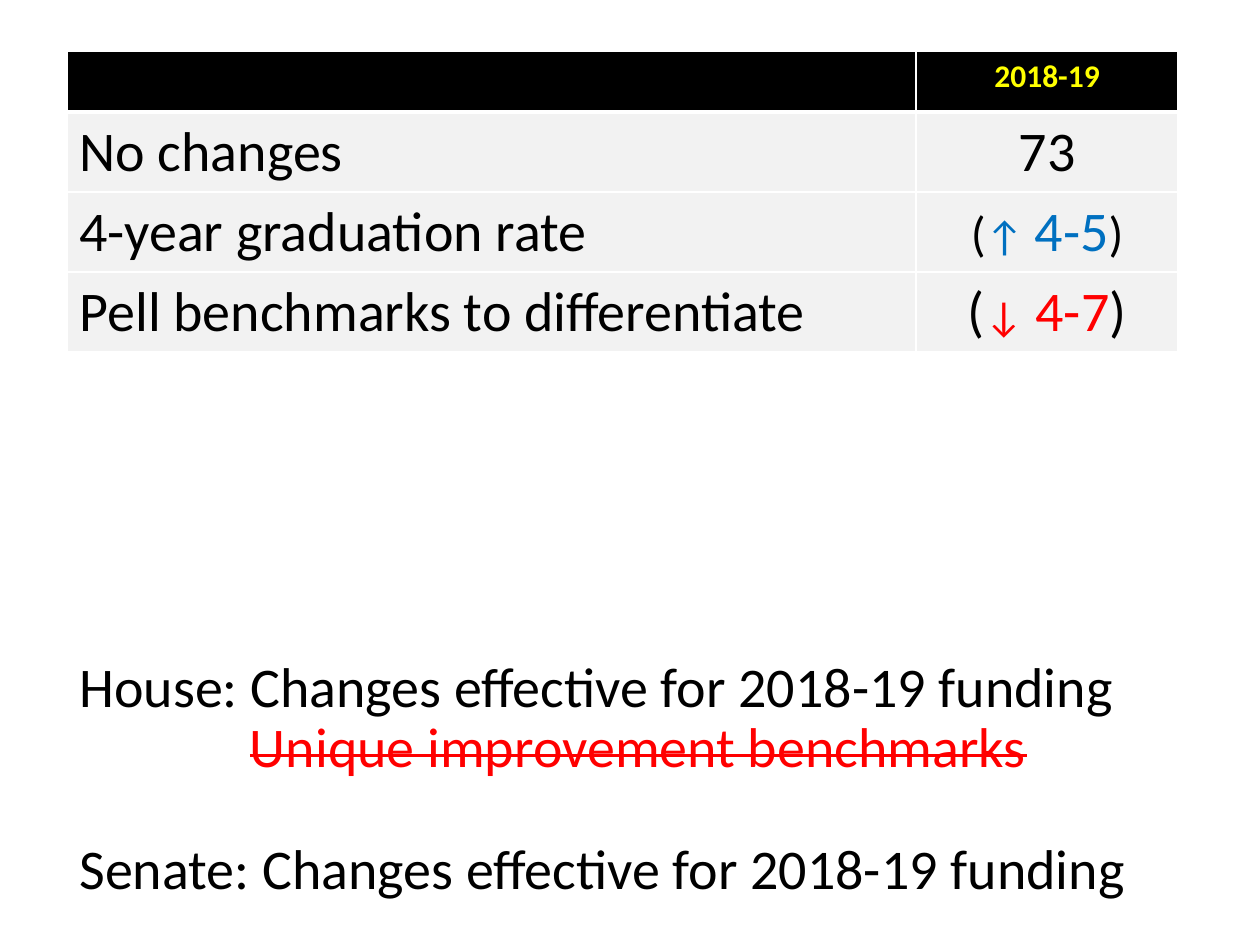
from lxml import etree
from pptx import Presentation
from pptx.dml.color import RGBColor
from pptx.enum import text as t
from pptx.oxml import ns
from pptx.util import Cm, Pt

BLACK, WHITE, GREY = "000000", "FFFFFF", "F2F2F2"
RED, BLUE, YELLOW = "FF0000", "0070C0", "FFFF00"

# Each cell is a list of runs: words, size, colour
ROWS = [
    ([], [("2018-19", 18, YELLOW)]),
    ([("No changes", 32, BLACK)], [("73", 32, BLACK)]),
    ([("4-year graduation rate", 32, BLACK)],
     [("(", 28, BLACK), ("↑", 24, BLUE), (" ", 28, BLUE),
      ("4-5", 32, BLUE), (")", 28, BLACK)]),
    ([("Pell benchmarks to differentiate", 32, BLACK)],
     [("(", 32, BLACK), ("↓", 24, RED), (" 4-7", 32, RED),
      (")", 32, BLACK)]),
]


def rgb(code):
    return RGBColor.from_string(code)


def add_run(para, words, size, color, bold=False):
    run = para.add_run()
    run.text = words
    font = run.font
    font.name, font.size, font.bold = "Calibri", Pt(size), bold
    font.color.rgb = rgb(color)
    return run


def add_edges(cell, top, foot):
    """Draw white cell borders; top and foot are widths in points."""
    props = cell._tc.get_or_add_tcPr()
    for side, width in zip("LRTB", (1, 1, top, foot)):
        line = etree.SubElement(props, ns.qn("a:ln" + side), w=str(Pt(width)))
        fill = etree.SubElement(line, ns.qn("a:solidFill"))
        etree.SubElement(fill, ns.qn("a:srgbClr"), val=WHITE)


def add_scores(slide, left, top, width, height):
    table = slide.shapes.add_table(len(ROWS), 2, left, top, width, height).table
    table.columns[0].width = Cm(17.12)
    table.columns[1].width = width - Cm(17.12)
    for r, row in enumerate(ROWS):
        head = r == 0
        table.rows[r].height = Cm(1.22 if head else 1.52)
        for c, runs in enumerate(row):
            cell = table.cell(r, c)
            add_edges(cell, 3 if r == 1 else 1, 3 if head else 1)
            cell.fill.solid()
            cell.fill.fore_color.rgb = rgb(BLACK if head else GREY)
            if not head:
                cell.vertical_anchor = t.MSO_ANCHOR.MIDDLE
            para = cell.text_frame.paragraphs[0]
            if c:
                para.alignment = t.PP_ALIGN.CENTER
            for words, size, color in runs:
                add_run(para, words, size, color, bold=head)


def add_bills(slide, left, top, width, height):
    frame = slide.shapes.add_textbox(left, top, width, height).text_frame
    frame.word_wrap = True
    house, cut, senate = (frame.paragraphs[0], frame.add_paragraph(),
                          frame.add_paragraph())
    for para in (house, cut, senate):
        para.line_spacing = 0.9
    add_run(house, "House: Changes effective for 2018-19 funding", 32, BLACK)
    cut._p.get_or_add_pPr().set("marL", str(Cm(3.44)))
    run = add_run(cut, "Unique improvement benchmarks", 32, RED)
    run._r.get_or_add_rPr().set("strike", "sngStrike")
    senate.space_before = Pt(35)
    add_run(senate, "Senate: Changes effective for 2018-19 funding", 32, BLACK)


def main():
    deck = Presentation()
    deck.slide_width, deck.slide_height = Cm(25.4), Cm(19.05)
    slide = deck.slides.add_slide(deck.slide_layouts[6])
    left, width = Cm(1.35), Cm(22.4)
    add_bills(slide, left, Cm(13.16), width, Cm(5.44))
    add_scores(slide, left, Cm(1.04), width, Cm(5.78))
    deck.save("out.pptx")


if __name__ == "__main__":
    main()
